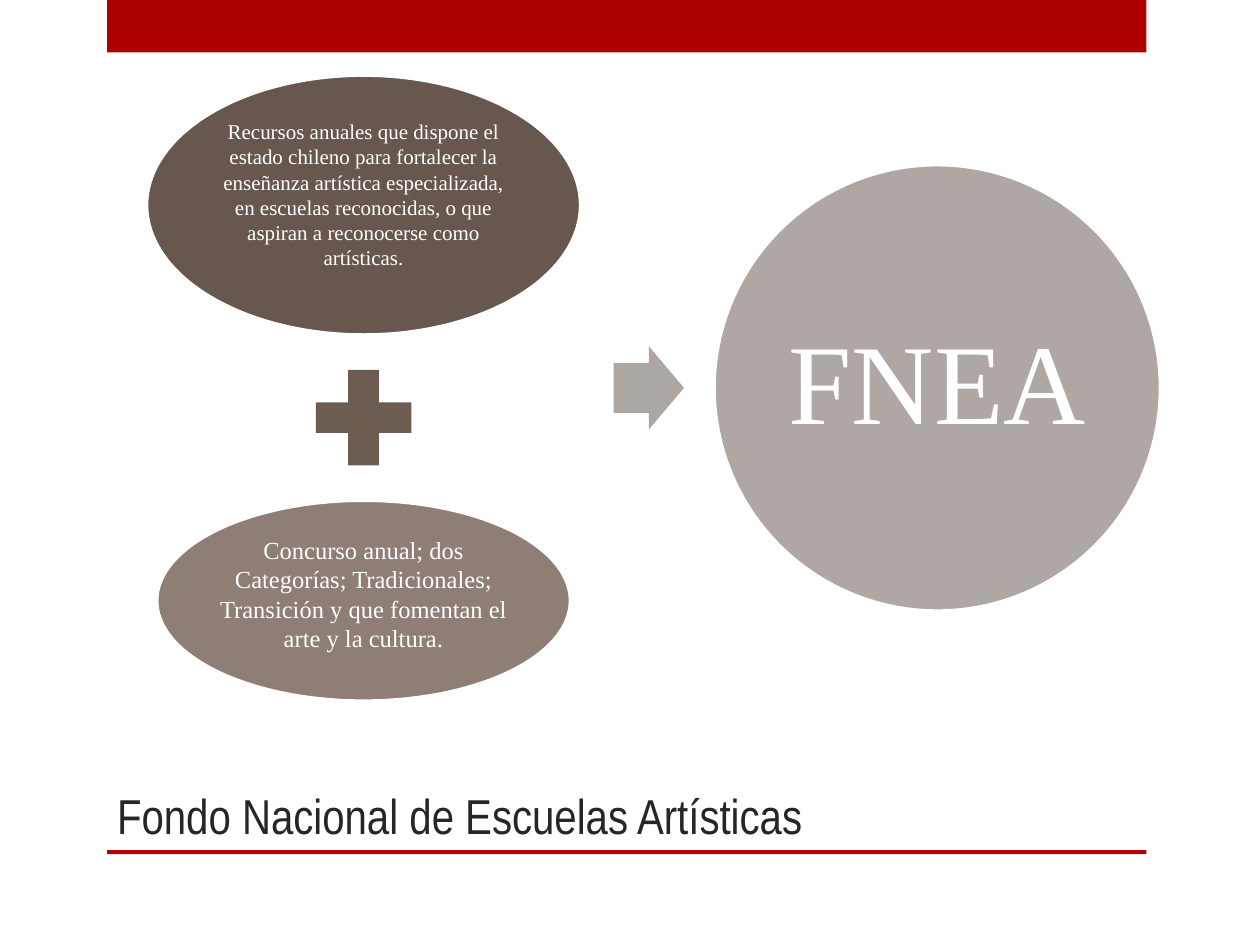
from dataclasses import dataclass

from pptx import Presentation
from pptx.dml.color import RGBColor
from pptx.enum.shapes import MSO_SHAPE
from pptx.enum.text import MSO_ANCHOR, PP_ALIGN
from pptx.util import Cm, Pt


@dataclass(frozen=True)
class Theme:
    red: str = "AD0101"
    ink: str = "262626"
    white: str = "FFFFFF"
    dark: str = "67574E"
    plus: str = "6D5C52"
    medium: str = "8E7E75"
    arrow: str = "ADA7A3"
    light: str = "AEA7A4"
    title_font: str = "Arial Narrow"
    body_font: str = "Times New Roman"
    title_size: int = 28
    resource_size: int = 12
    contest_size: int = 14
    result_size: int = 65
    outline: float = 1.75


THEME = Theme()
COLUMN_X = 7.33   # centre line of the stacked terms
COLUMN_GAP = 0.36
ROW_Y = 7.82      # centre line of the arrow and the result


def add_figure(slide, kind, left, top, width, height, color):
    s = slide.shapes.add_shape(kind, Cm(left), Cm(top), Cm(width), Cm(height))
    s.shadow.inherit = False
    s.fill.solid()
    s.fill.fore_color.rgb = RGBColor.from_string(color)
    s.line.fill.background()
    return s


def style_paragraph(p, text, font, size, color):
    p.text = text
    p.font.name = font
    p.font.size = Pt(size)
    p.font.color.rgb = RGBColor.from_string(color)


def add_oval(slide, left, top, width, height, color, text, size,
             spacing=1.0, lift=0):
    """Add an outlined ellipse with centred text; lift adds bottom margin."""
    s = add_figure(slide, MSO_SHAPE.OVAL, left, top, width, height, color)
    s.line.color.rgb = RGBColor.from_string(THEME.white)
    s.line.width = Pt(THEME.outline)
    tf = s.text_frame
    tf.word_wrap = True
    tf.vertical_anchor = MSO_ANCHOR.MIDDLE
    inset = 0.05
    tf.margin_left = tf.margin_right = tf.margin_top = Cm(inset)
    tf.margin_bottom = Cm(inset + lift)
    p = tf.paragraphs[0]
    p.alignment = PP_ALIGN.CENTER
    p.line_spacing = spacing
    style_paragraph(p, text, THEME.body_font, size, THEME.white)


def add_frame(slide):
    for top, height in ((0, 1.06), (17.14, 0.08)):
        add_figure(slide, MSO_SHAPE.RECTANGLE, 2.16, top, 20.95, height, THEME.red)


def add_title(slide, text):
    tf = slide.shapes.add_textbox(Cm(2.11), Cm(12.7), Cm(18.85), Cm(4.44)).text_frame
    tf.word_wrap = True
    tf.vertical_anchor = MSO_ANCHOR.BOTTOM
    style_paragraph(tf.paragraphs[0], text, THEME.title_font,
                    THEME.title_size, THEME.ink)


def add_terms(slide):
    """Stack the two terms and the plus sign on one centre line."""
    top = 1.52
    width, height = 8.74, 5.23
    add_oval(slide, COLUMN_X - width / 2, top, width, height, THEME.dark,
             "Recursos anuales que dispone el estado chileno para fortalecer la "
             "enseñanza artística especializada, en escuelas reconocidas, o que "
             "aspiran a reconocerse como artísticas.",
             THEME.resource_size, lift=0.43)
    top += height + COLUMN_GAP
    side = 2.62
    add_figure(slide, MSO_SHAPE.MATH_PLUS, COLUMN_X - side / 2, top, side, side,
               THEME.plus)
    top += side + COLUMN_GAP
    width, height = 8.33, 4.04
    add_oval(slide, COLUMN_X - width / 2, top, width, height, THEME.medium,
             "Concurso anual; dos Categorías; Tradicionales; Transición y que "
             "fomentan el arte y la cultura.",
             THEME.contest_size, lift=0.28)


def add_result(slide):
    height = 1.68
    arrow = add_figure(slide, MSO_SHAPE.RIGHT_ARROW, 12.37, ROW_Y - height / 2,
                       1.42, height, THEME.arrow)
    arrow.adjustments[0] = 0.6
    arrow.adjustments[1] = 0.5
    side = 8.99
    add_oval(slide, 14.4, ROW_Y - side / 2, side, side, THEME.light, "FNEA",
             THEME.result_size, spacing=0.9)


def main():
    prs = Presentation()
    prs.slide_width, prs.slide_height = Cm(25.4), Cm(19.05)
    slide = prs.slides.add_slide(prs.slide_layouts[6])
    add_frame(slide)
    add_title(slide, "Fondo Nacional de Escuelas Artísticas")
    add_terms(slide)
    add_result(slide)
    prs.save("out.pptx")


if __name__ == "__main__":
    main()
